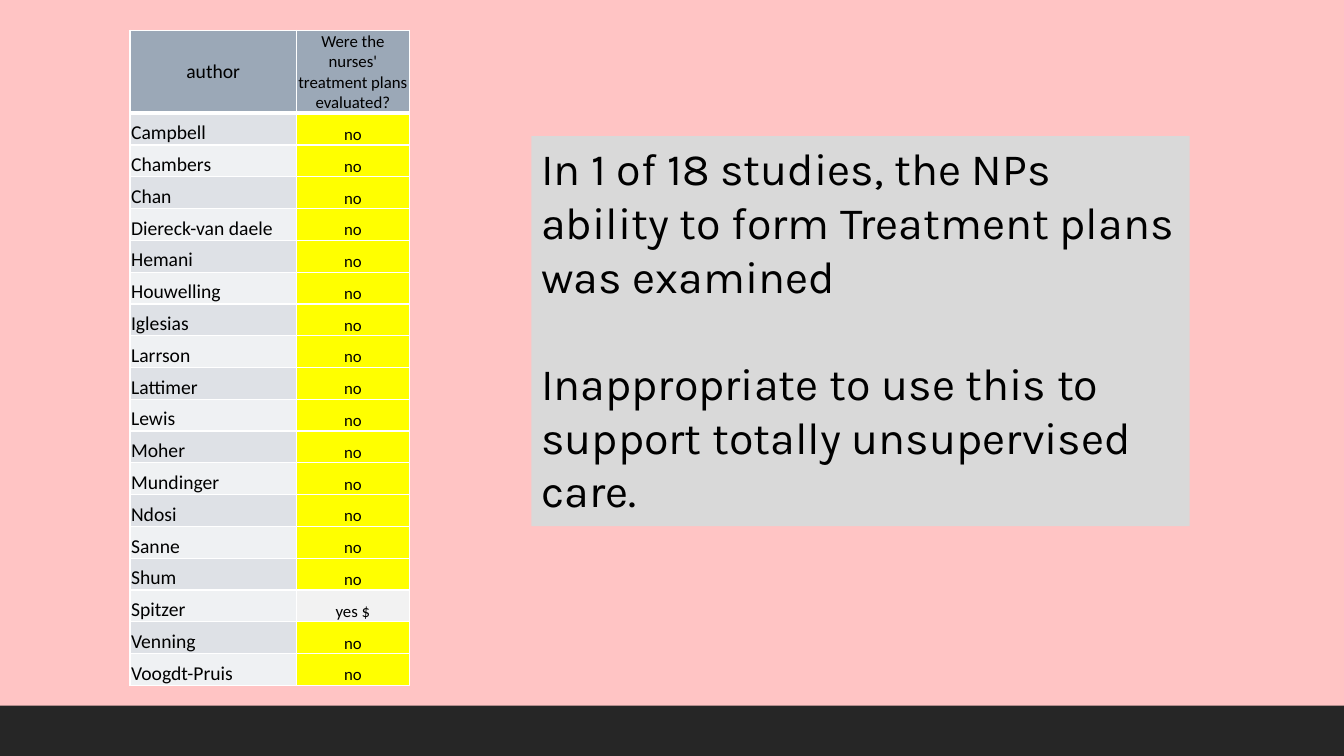
from pptx import Presentation
from pptx.dml.color import RGBColor
from pptx.enum import shapes, text
from pptx.oxml import parse_xml
from pptx.oxml.ns import nsdecls
from pptx.util import Inches, Pt

PINK = RGBColor(0xFF, 0xC4, 0xC4)
DARK = RGBColor(0x26, 0x26, 0x26)
GREY = RGBColor(0xD9, 0xD9, 0xD9)
BLACK = RGBColor(0, 0, 0)
SLATE = RGBColor(0x9B, 0xA8, 0xB7)
BANDS = RGBColor(0xDE, 0xE1, 0xE6), RGBColor(0xEF, 0xF1, 0xF3)
YELLOW = RGBColor(0xFF, 0xFF, 0)
PALE = RGBColor(0xF2, 0xF2, 0xF2)
LEFT, MID = text.PP_ALIGN.LEFT, text.PP_ALIGN.CENTER

HEAD = "author", "Were the nurses' treatment plans evaluated?"
NAMES = [
    "Campbell", "Chambers", "Chan", "Diereck-van daele", "Hemani",
    "Houwelling", "Iglesias", "Larrson", "Lattimer", "Lewis", "Moher",
    "Mundinger", "Ndosi", "Sanne", "Shum", "Spitzer", "Venning",
    "Voogdt-Pruis",
]
PLANS = {"Spitzer": "yes $"}
NOTES = [
    "In 1 of 18 studies, the NPs ability to form Treatment plans was examined",
    "Inappropriate to use this to support totally unsupervised care.",
]


def write(frame, lines, size, font, align=LEFT, gap=0):
    frame.word_wrap = True
    for num, line in enumerate(lines):
        para = frame.paragraphs[0] if num == 0 else frame.add_paragraph()
        para.alignment = align
        if num:
            para.space_before = Pt(gap)
        run = para.add_run()
        run.text = line
        run.font.size = Pt(size)
        run.font.name = font
        run.font.color.rgb = BLACK


def block(slide, box, fill):
    rect = slide.shapes.add_shape(
        shapes.MSO_SHAPE.RECTANGLE, *map(Inches, box))
    rect.shadow.inherit = False
    rect.fill.solid()
    rect.fill.fore_color.rgb = fill
    rect.line.fill.background()
    return rect


def edge(cell, base):
    props = cell._tc.get_or_add_tcPr()
    sides = {"L": 1, "R": 1, "T": 1, "B": base}
    for spot, (side, width) in enumerate(sides.items()):
        props.insert(spot, parse_xml(
            f'<a:ln{side} {nsdecls("a")} w="{Pt(width)}"><a:solidFill>'
            f'<a:srgbClr val="FFFFFF"/></a:solidFill></a:ln{side}>'))


def style(cell, words, size, fill, align, anchor, base=1):
    cell.margin_left = cell.margin_right = cell.margin_top = Inches(0.01)
    cell.margin_bottom = 0
    cell.vertical_anchor = anchor
    cell.fill.solid()
    cell.fill.fore_color.rgb = fill
    edge(cell, base)
    write(cell.text_frame, [words], size, "Calibri", align)


def studies(slide, box):
    tall, top = box[3], 0.82
    grid = slide.shapes.add_table(
        len(NAMES) + 1, 2, *map(Inches, box)).table
    for col, wide in zip(grid.columns, (1.65, 1.12)):
        col.width = Inches(wide)
    for num, row in enumerate(grid.rows):
        row.height = Inches((tall - top) / len(NAMES) if num else top)
    for col, (words, size) in enumerate(zip(HEAD, (14, 12))):
        style(grid.cell(0, col), words, size, SLATE, MID,
              text.MSO_ANCHOR.MIDDLE, 3)
    for num, name in enumerate(NAMES):
        plan = PLANS.get(name, "no")
        tint = YELLOW if plan == "no" else PALE
        low = text.MSO_ANCHOR.BOTTOM
        style(grid.cell(num + 1, 0), name, 14, BANDS[num % 2], LEFT, low)
        style(grid.cell(num + 1, 1), plan, 12, tint, MID, low)


def finding(slide, box):
    frame = block(slide, box, GREY).text_frame
    frame.vertical_anchor = text.MSO_ANCHOR.TOP
    write(frame, NOTES, 32, "Karla", gap=38)


def main():
    deck = Presentation()
    deck.slide_width, deck.slide_height = Inches(13.33), Inches(7.5)
    slide = deck.slides.add_slide(deck.slide_layouts[6])
    slide.background.fill.solid()
    slide.background.fill.fore_color.rgb = PINK
    block(slide, (0, 7, 13.33, 0.5), DARK)
    studies(slide, (1.29, 0.3, 2.77, 6.5))
    finding(slide, (5.27, 1.35, 6.53, 3.87))
    deck.save("out.pptx")


if __name__ == "__main__":
    main()
